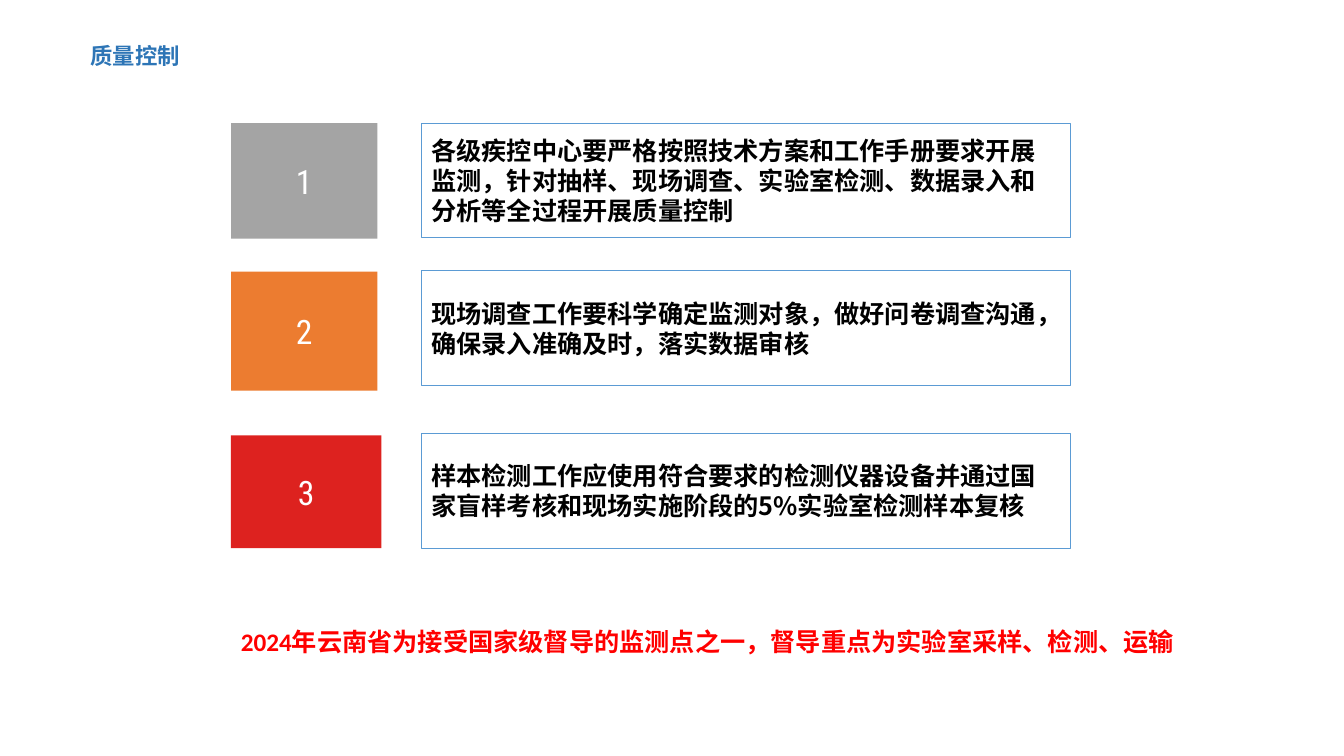
from pptx import Presentation
from pptx.dml.color import RGBColor
from pptx.enum import shapes, text
from pptx.oxml import ns
from pptx.util import Pt
from lxml import etree

CJK = "Noto Sans CJK SC"
ROWS = [
    # box top, number top, number width, number height, fill, paragraphs
    (88, 88, 104.5, 82.5, "A4A4A4",
     ["各级疾控中心要严格按照技术方案和工作手册要求开展 监测，针对抽样、现场调查、"
      "实验室检测、数据录入和 分析等全过程开展质量控制"]),
    (193.5, 194, 104.5, 85, "EC7C30",
     ["现场调查工作要科学确定监测对象，做好问卷调查沟通， 确保录入准确及时，落实数据审核"]),
    (309.5, 311, 107.5, 80.5, "DD221F",
     ["样本检测工作应使用符合要求的检测仪器设备并通过国",
      "家盲样考核和现场实施阶段的5%实验室检测样本复核"]),
]


def rgb(value):
    return RGBColor.from_string(value)


def write(sp, lines, size, color, font=CJK, bold=True, align=text.PP_ALIGN.LEFT,
          margins=(0, 0), wrap=True, spacing=None):
    """Fill a shape with vertically centred text; margins are left and right."""
    tf = sp.text_frame
    tf.word_wrap = wrap
    tf.auto_size = text.MSO_AUTO_SIZE.NONE
    tf.vertical_anchor = text.MSO_ANCHOR.MIDDLE
    tf.margin_left, tf.margin_right = (Pt(m) for m in margins)
    tf.margin_top = tf.margin_bottom = 0
    for i, line in enumerate(lines):
        p = tf.add_paragraph() if i else tf.paragraphs[0]
        p.alignment = align
        p.space_before = Pt(0)
        p.line_spacing = Pt(spacing) if spacing else 1.0
        r = p.add_run()
        r.text = line
        r.font.name, r.font.size, r.font.bold = font, Pt(size), bold
        r.font.color.rgb = rgb(color)
        ea = etree.SubElement(r._r.get_or_add_rPr(), ns.qn("a:ea"))
        ea.set("typeface", CJK)


def add_rect(slide, left, top, width, height, fill=None, line=None):
    sp = slide.shapes.add_shape(shapes.MSO_SHAPE.RECTANGLE,
                                Pt(left), Pt(top), Pt(width), Pt(height))
    sp.shadow.inherit = False
    if fill:
        sp.fill.solid()
        sp.fill.fore_color.rgb = rgb(fill)
    else:
        sp.fill.background()
    if line:
        sp.line.color.rgb = rgb(line)
        sp.line.width = Pt(0.72)
    else:
        sp.line.fill.background()
    return sp


def add_title(slide, heading):
    sp = slide.shapes.title
    sp.left, sp.top, sp.width, sp.height = Pt(64), Pt(29), Pt(66), Pt(21)
    write(sp, [heading], 16, "2D75B6", margins=(0.75, 0), wrap=False)


def add_row(slide, number, top, number_top, width, height, fill, lines):
    badge = add_rect(slide, 165, number_top, width, height, fill=fill)
    write(badge, [str(number)], 24, "FFFFFF", "Roboto Condensed", False,
          text.PP_ALIGN.CENTER)
    box = add_rect(slide, 301, top, 463.5, 82, line="5B9BD4")
    write(box, lines, 18, "000000", margins=(7, 5), spacing=21.5)


def add_note(slide, note):
    sp = slide.shapes.add_textbox(Pt(165), Pt(444), Pt(687), Pt(29))
    write(sp, [note], 18, "FF0000", "Calibri", margins=(7.2, 7.2))


def main():
    prs = Presentation()
    prs.slide_width, prs.slide_height = Pt(960), Pt(540)
    slide = prs.slides.add_slide(prs.slide_layouts[5])
    add_title(slide, "质量控制")
    for number, row in enumerate(ROWS, 1):
        add_row(slide, number, *row)
    add_note(slide, "2024年云南省为接受国家级督导的监测点之一，督导重点为实验室采样、检测、运输")
    prs.save("out.pptx")


if __name__ == "__main__":
    main()
